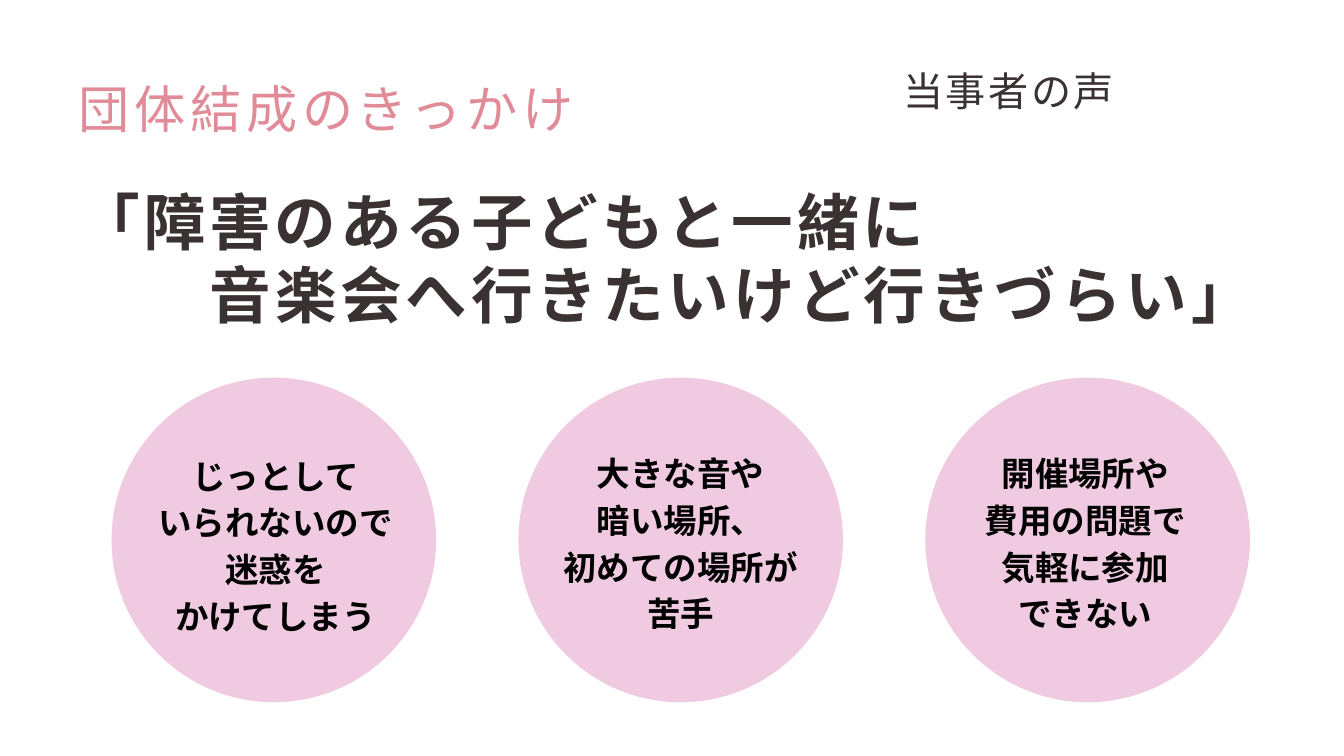
"""Builds the slide on why the group was founded, with three concerns in circles."""
from dataclasses import dataclass

from lxml.etree import SubElement
from pptx import Presentation
from pptx.dml.color import RGBColor
from pptx.enum.shapes import MSO_SHAPE
from pptx.enum.text import MSO_AUTO_SIZE, PP_ALIGN
from pptx.oxml.ns import qn
from pptx.slide import Slide
from pptx.util import Emu, Inches, Pt

WIDTH, HEIGHT = Inches(20), Inches(11.25)
COLUMNS, ROWS = 20, 11.25


@dataclass(frozen=True)
class TextStyle:
    size: float
    leading: float
    color: str
    bold: bool = False
    spacing: float = 0
    align: PP_ALIGN = PP_ALIGN.LEFT


@dataclass(frozen=True)
class Theme:
    font: str = "Noto Sans CJK JP"
    circle: str = "EFCAE0"
    concern: TextStyle = TextStyle(35.9, 50.2, "000000", True, align=PP_ALIGN.CENTER)
    speaker: TextStyle = TextStyle(43, 51.6, "393132", spacing=2.8)
    heading: TextStyle = TextStyle(54.8, 76.7, "E28B98", spacing=5.1)
    quote: TextStyle = TextStyle(66, 79.2, "393132", True, 4.2)


@dataclass(frozen=True)
class Area:
    column: float
    row: float
    columns: float
    rows: float

    def box(self) -> tuple[Emu, Emu, Emu, Emu]:
        """Converts grid units to slide lengths."""
        return (across(self.column), down(self.row), across(self.columns), down(self.rows))


@dataclass(frozen=True)
class Passage:
    area: Area
    lines: tuple[str, ...]
    style: TextStyle
    indents: tuple[int, ...] = ()


THEME = Theme()
DIAMETER, FIRST_COLUMN, CIRCLE_ROW, PITCH = 4.83, 1.66, 5.62, 6.055

CONCERNS = (
    Passage(Area(2.25, 6.68, 3.7, 2.71),
            ("じっとして", "いられないので", "迷惑を", "かけてしまう"), THEME.concern),
    Passage(Area(8.28, 6.64, 3.7, 2.71),
            ("大きな音や", "暗い場所、", "初めての場所が", "苦手"), THEME.concern),
    Passage(Area(14.55, 6.64, 3.2, 2.71),
            ("開催場所や", "費用の問題で", "気軽に参加", "できない"), THEME.concern),
)
TITLES = (
    Passage(Area(13.44, 0.99, 7.41, 0.65), ("当事者の声",), THEME.speaker),
    Passage(Area(1.17, 1, 8.96, 0.94), ("団体結成のきっかけ",), THEME.heading),
    Passage(Area(1.17, 2.73, 18.44, 2.2),
            ("「障害のある子どもと一緒に", "音楽会へ行きたいけど行きづらい」"),
            THEME.quote, indents=(0, 2)),
)


def across(columns: float) -> Emu:
    """Returns the width of a number of columns."""
    return Emu(round(WIDTH * columns / COLUMNS))


def down(rows: float) -> Emu:
    """Returns the height of a number of rows."""
    return Emu(round(HEIGHT * rows / ROWS))


def set_all(target: object, values: dict[str, object]) -> None:
    """Sets each named attribute on the target."""
    for name, value in values.items():
        setattr(target, name, value)


def draw_circle(slide: Slide, area: Area) -> None:
    """Draws a plain filled circle."""
    circle = slide.shapes.add_shape(MSO_SHAPE.OVAL, *area.box())
    circle.shadow.inherit = False
    circle.fill.solid()
    circle.fill.fore_color.rgb = RGBColor.from_string(THEME.circle)
    circle.line.fill.background()


def draw_passage(slide: Slide, passage: Passage) -> None:
    """Writes one paragraph per line, indented by whole characters."""
    style = passage.style
    frame = slide.shapes.add_textbox(*passage.area.box()).text_frame
    set_all(frame, {
        "word_wrap": True, "auto_size": MSO_AUTO_SIZE.SHAPE_TO_FIT_TEXT,
        "margin_left": 0, "margin_top": 0, "margin_right": 0, "margin_bottom": 0,
    })
    frame.text = "\n".join(passage.lines)
    for paragraph in frame.paragraphs:
        set_all(paragraph, {"alignment": style.align, "line_spacing": Pt(style.leading)})
        run = paragraph.runs[0]
        set_all(run.font, {"size": Pt(style.size), "bold": style.bold, "name": THEME.font})
        run.font.color.rgb = RGBColor.from_string(style.color)
        properties = run.font._element
        properties.set("spc", str(round(style.spacing * 100)))
        SubElement(properties, qn("a:ea")).set("typeface", THEME.font)
    for paragraph, characters in zip(frame.paragraphs, passage.indents):
        indent = Pt(characters * (style.size + style.spacing))
        paragraph._p.get_or_add_pPr().set("marL", str(indent))


def main() -> None:
    """Builds and saves the slide."""
    deck = Presentation()
    set_all(deck, {"slide_width": WIDTH, "slide_height": HEIGHT})
    slide = deck.slides.add_slide(deck.slide_layouts[6])
    for index, concern in enumerate(CONCERNS):
        draw_circle(slide, Area(FIRST_COLUMN + index * PITCH, CIRCLE_ROW, DIAMETER, DIAMETER))
        draw_passage(slide, concern)
    for title in TITLES:
        draw_passage(slide, title)
    deck.save("out.pptx")


if __name__ == "__main__":
    main()
